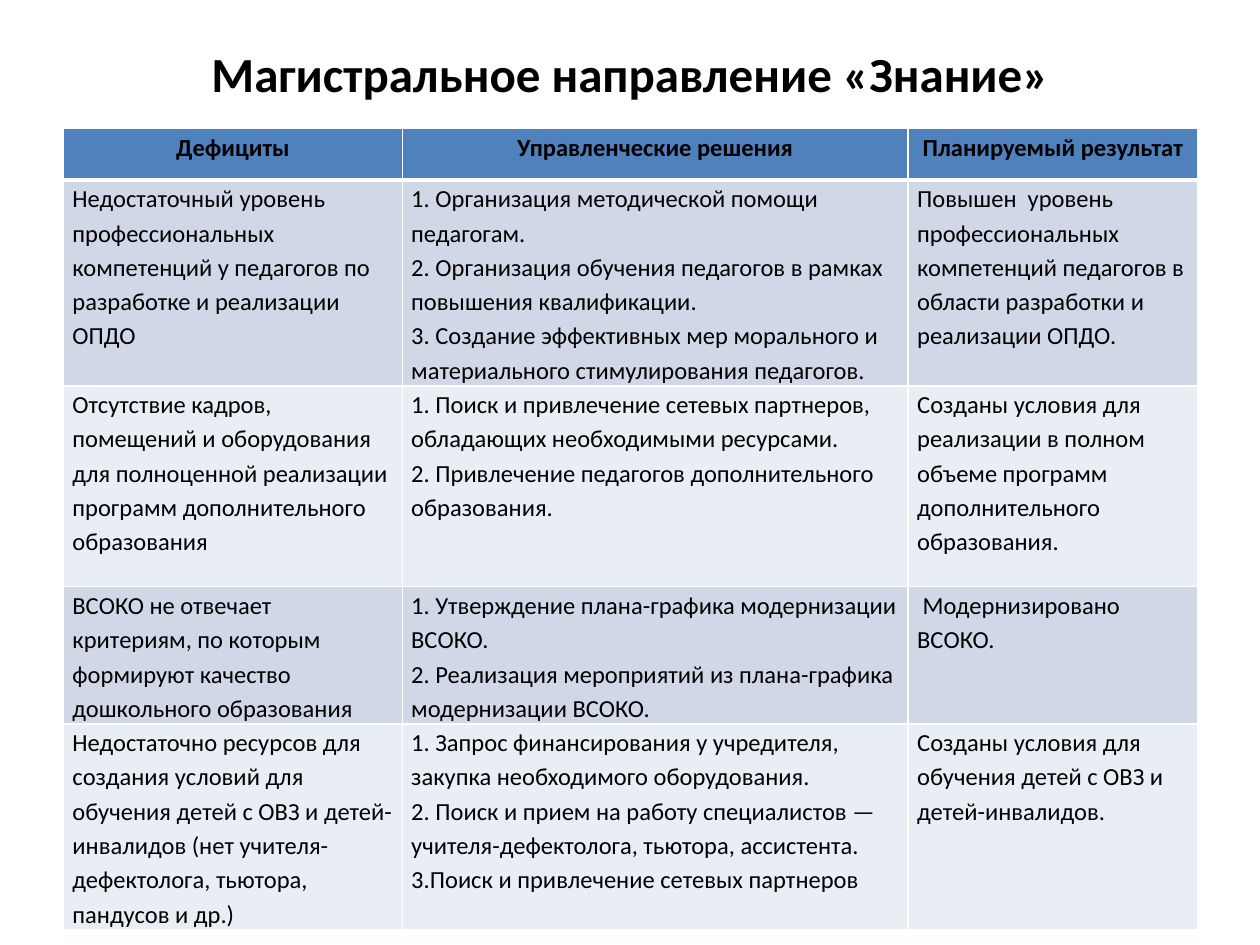
from lxml.etree import SubElement
from pptx import Presentation
from pptx.dml.color import RGBColor
from pptx.enum.text import MSO_ANCHOR as Anchor, PP_ALIGN as Align
from pptx.oxml.ns import qn
from pptx.util import Cm, Pt

BLACK = RGBColor(0x00, 0x00, 0x00)
WHITE = RGBColor(0xFF, 0xFF, 0xFF)
HEADER = RGBColor(0x4F, 0x81, 0xBD)
BANDS = (RGBColor(0xD0, 0xD8, 0xE8), RGBColor(0xE9, 0xED, 0xF4))

TITLE = "Магистральное направление «Знание»"
COL_WIDTHS = (6.83, 10.2, 5.83)
ROW_HEIGHTS = (1.04, 4.14, 4.05, 2.76, 4.14)

# A cell is a list of paragraphs; a newline inside one is a line break
ROWS = [
    [["Дефициты"], ["Управленческие решения"], ["Планируемый результат"]],
    [
        ["Недостаточный уровень профессиональных компетенций у педагогов "
         "по разработке и реализации ОПДО"],
        ["1. Организация методической помощи педагогам.\n"
         "2. Организация обучения педагогов в рамках повышения квалификации.\n"
         "3. Создание эффективных мер морального "
         "и материального стимулирования педагогов."],
        ["Повышен  уровень профессиональных компетенций педагогов "
         "в области разработки и реализации ОПДО."],
    ],
    [
        ["Отсутствие кадров, помещений и оборудования для полноценной "
         "реализации программ дополнительного образования"],
        ["1. Поиск и привлечение сетевых партнеров, "
         "обладающих необходимыми ресурсами.\n"
         "2. Привлечение педагогов дополнительного образования."],
        ["Созданы условия для реализации в полном объеме программ "
         "дополнительного образования."],
    ],
    [
        ["ВСОКО не отвечает критериям, по которым формируют качество "
         "дошкольного образования"],
        ["1. Утверждение плана-графика модернизации ВСОКО.\n"
         "2. Реализация мероприятий из плана-графика модернизации ВСОКО."],
        [" Модернизировано ВСОКО."],
    ],
    [
        ["Недостаточно ресурсов для создания условий для обучения детей с ОВЗ "
         "и детей-инвалидов (нет учителя-дефектолога, тьютора, пандусов и др.)"],
        ["1. Запрос финансирования у учредителя, "
         "закупка необходимого оборудования.\n"
         "2. Поиск и прием на работу специалистов — "
         "учителя-дефектолога, тьютора, ассистента.",
         "3.Поиск и привлечение сетевых партнеров"],
        ["Созданы условия для обучения детей с ОВЗ и детей-инвалидов."],
    ],
]


class SlideBuilder:
    """Holds the text style and the current slide."""

    font_name = "Calibri"
    title_size = Pt(28)
    cell_size = Pt(14)
    line_spacing = 1.15
    inset = Cm(0.18)

    def __init__(self, prs):
        self.s = prs.slides.add_slide(prs.slide_layouts[5])

    def format(self, p, size, bold, align):
        p.alignment = align
        p.font.name, p.font.size, p.font.bold = self.font_name, size, bold
        p.font.color.rgb = BLACK

    def title(self, text, left, top, width, height):
        sp = self.s.shapes.title
        sp.left, sp.top, sp.width, sp.height = map(Cm, (left, top, width, height))
        tf = sp.text_frame
        tf.text = text
        tf.word_wrap = True
        tf.vertical_anchor = Anchor.MIDDLE
        self.format(tf.paragraphs[0], self.title_size, True, Align.CENTER)

    def borders(self, cell, bottom):
        """Draw white edges; they must precede the fill in the cell's XML."""
        tc_pr = cell._tc.get_or_add_tcPr()
        for side, width in (("L", 1), ("R", 1), ("T", 1), ("B", bottom)):
            ln = SubElement(tc_pr, qn(f"a:ln{side}"), w=str(Pt(width)))
            fill = SubElement(ln, qn("a:solidFill"))
            SubElement(fill, qn("a:srgbClr"), val=str(WHITE))

    def cell(self, cell, paragraphs, is_header, color):
        self.borders(cell, 3 if is_header else 1)
        cell.fill.solid()
        cell.fill.fore_color.rgb = color
        cell.margin_left = cell.margin_right = self.inset
        cell.margin_top = cell.margin_bottom = 0
        tf = cell.text_frame
        for i, text in enumerate(paragraphs):
            p = tf.add_paragraph() if i else tf.paragraphs[0]
            p.text = text
            p.line_spacing = self.line_spacing
            self.format(p, self.cell_size, is_header,
                        Align.CENTER if is_header else Align.LEFT)

    def table(self, rows, left, top, widths, heights):
        frame = self.s.shapes.add_table(
            len(rows), len(widths), Cm(left), Cm(top),
            Cm(sum(widths)), Cm(sum(heights)))
        table = frame.table
        for column, width in zip(table.columns, widths):
            column.width = Cm(width)
        for r, (row, height) in enumerate(zip(rows, heights)):
            table.rows[r].height = Cm(height)
            color = BANDS[(r - 1) % 2] if r else HEADER
            for c, paragraphs in enumerate(row):
                self.cell(table.cell(r, c), paragraphs, r == 0, color)


def main():
    prs = Presentation()
    prs.slide_width, prs.slide_height = Cm(25.4), Cm(19.05)
    slide = SlideBuilder(prs)

    # Heading
    slide.title(TITLE, 1.27, 0.76, 22.86, 1.42)

    # Gaps, decisions and expected results
    slide.table(ROWS, 1.28, 2.59, COL_WIDTHS, ROW_HEIGHTS)

    prs.save("out.pptx")


if __name__ == "__main__":
    main()
